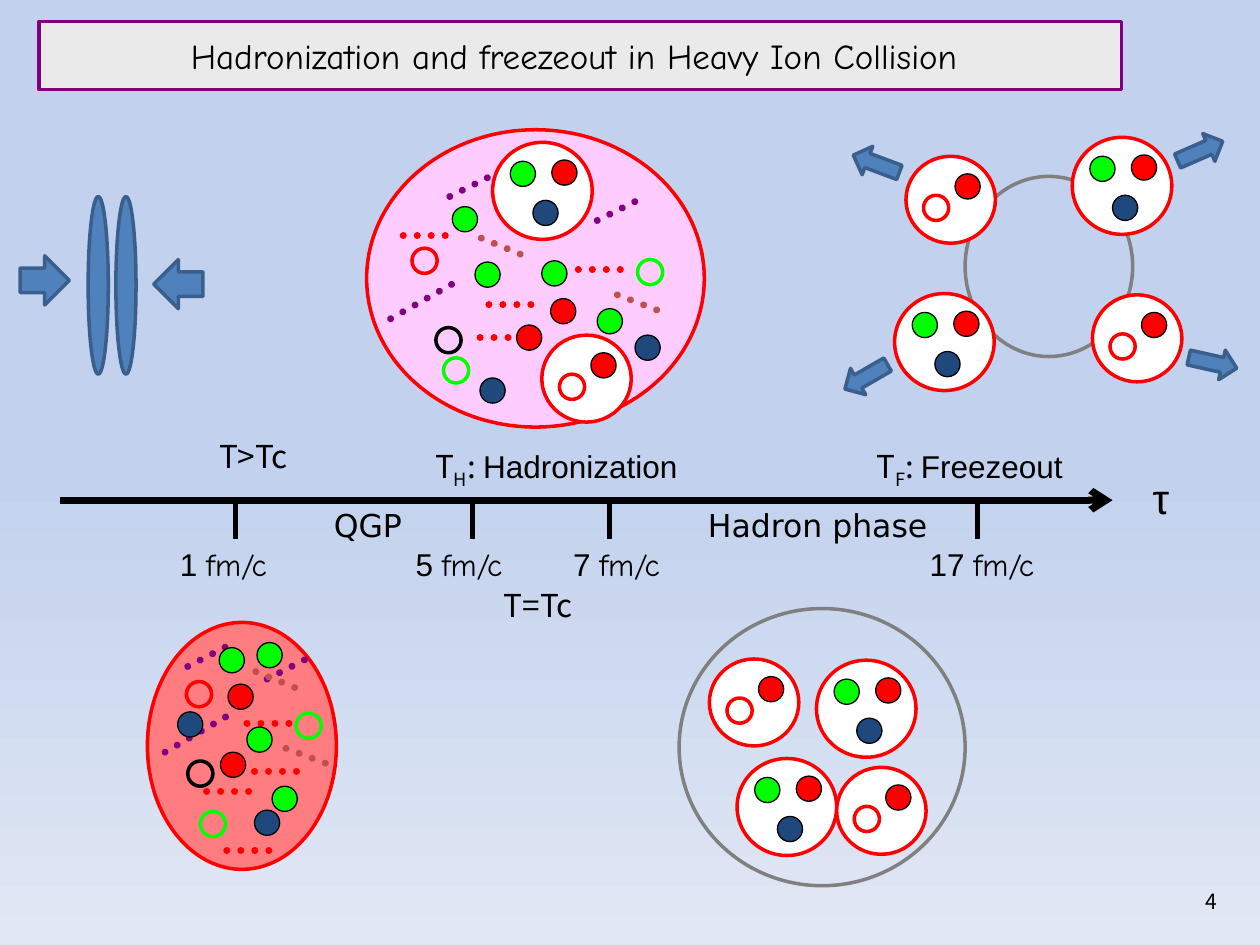
from lxml import etree
from pptx import Presentation
from pptx.dml.color import RGBColor
from pptx.enum.dml import MSO_LINE
from pptx.enum.shapes import MSO_CONNECTOR, MSO_SHAPE
from pptx.enum.text import MSO_ANCHOR, MSO_AUTO_SIZE, PP_ALIGN
from pptx.oxml.ns import qn
from pptx.util import Inches, Pt

COLORS = {
    "red": "FF0000", "green": "00FF00", "navy": "1F497D", "black": "000000",
    "white": "FFFFFF", "gray": "808080", "purple": "800080", "brown": "C0504D",
    "plasma": "FF7C80", "mixed": "FFCCFF", "blue": "4F81BD", "edge": "3A5F8C",
    "panel": "EAEAEA", "sky": "C2D1ED", "haze": "E1E8F5",
}
RGB = {name: RGBColor.from_string(value) for name, value in COLORS.items()}
SANS, ARIAL, COMIC, DEJAVU = "Noto Sans CJK KR", "Arial", "Comic Neue", "DejaVu Sans"

presentation = Presentation()
presentation.slide_width, presentation.slide_height = Inches(10), Inches(7.5)
slide = presentation.slides.add_slide(presentation.slide_layouts[6])


def add_shape(kind, left, top, width, height, fill=None, line="red", weight=2, rotation=0):
    shape = slide.shapes.add_shape(
        kind, Inches(left), Inches(top), Inches(width), Inches(height))
    shape.shadow.inherit = False
    shape.rotation = rotation
    if fill:
        shape.fill.solid()
        shape.fill.fore_color.rgb = RGB[fill]
    else:
        shape.fill.background()
    shape.line.color.rgb = RGB[line]
    shape.line.width = Pt(weight)
    return shape


def add_text(runs, left=0, top=0, width=1, height=0.4, size=18, align=PP_ALIGN.LEFT,
             anchor=MSO_ANCHOR.TOP, shape=None, wrap=True):
    """Write (text, font, baseline) runs in the given shape or in a new text box."""
    box = shape or slide.shapes.add_textbox(
        Inches(left), Inches(top), Inches(width), Inches(height))
    frame = box.text_frame
    frame.word_wrap = wrap
    frame.vertical_anchor = anchor
    if anchor == MSO_ANCHOR.TOP:
        frame.auto_size = MSO_AUTO_SIZE.SHAPE_TO_FIT_TEXT
    paragraph = frame.paragraphs[0]
    paragraph.alignment = align
    for text, font, baseline in runs:
        run = paragraph.add_run()
        run.text = text
        run.font.name = font
        run.font.size = Pt(size)
        run.font.color.rgb = RGB["black"]
        if baseline:
            run._r.get_or_add_rPr().set("baseline", str(baseline * 1000))


# Background
background = slide.background.fill
background.gradient()
background.gradient_angle = 270
for stop, position, color in zip(background.gradient_stops, (0.5, 1), ("sky", "haze")):
    stop.position = position
    stop.color.rgb = RGB[color]

# Fireballs and the rings around the hadrons
OVAL = MSO_SHAPE.OVAL
add_shape(OVAL, 5.39, 4.83, 2.27, 2.2, line="gray")
add_shape(OVAL, 7.66, 1.4, 1.33, 1.43, line="gray")
add_shape(OVAL, 1.17, 4.94, 1.5, 1.96, fill="plasma")
add_shape(OVAL, 2.91, 1.03, 2.68, 2.36, fill="mixed")

# Gluons (dotted), time axis and its ticks
AXIS_Y = 3.97
gluons = {
    "purple": [(1.31, 5.97, 1.86, 5.65), (2.12, 5.39, 2.43, 5.23), (1.49, 5.29, 1.8, 5.13),
               (3.1, 2.53, 3.65, 2.22), (4.74, 1.75, 5.06, 1.59), (3.57, 1.56, 3.89, 1.4)],
    "brown": [(2.03, 5.33, 2.42, 5.49), (2.27, 5.94, 2.67, 6.09),
              (3.82, 1.89, 4.21, 2.05), (4.9, 2.34, 5.29, 2.49)],
    "red": [(x, y, x + 0.39, y) for x, y in (
        (2.02, 6.12), (1.8, 6.75), (1.96, 5.74), (1.64, 6.28),
        (3.81, 2.68), (3.2, 1.87), (4.59, 2.14), (3.88, 2.42))],
}
lines = [(ends, color, 4, "dots") for color, group in gluons.items() for ends in group]
lines.append(((0.48, AXIS_Y, 8.83, AXIS_Y), "black", 4, "arrow"))
lines += [((x, AXIS_Y, x, 4.28), "black", 3, "plain") for x in (1.87, 3.75, 4.84, 7.76)]
for ends, color, weight, style in lines:
    connector = slide.shapes.add_connector(
        MSO_CONNECTOR.STRAIGHT, *[Inches(value) for value in ends])
    connector.line.color.rgb = RGB[color]
    connector.line.width = Pt(weight)
    outline = connector.line._get_or_add_ln()
    if style == "dots":
        connector.line.dash_style = MSO_LINE.ROUND_DOT
        outline.set("cap", "rnd")
    elif style == "arrow":
        etree.SubElement(outline, qn("a:tailEnd"), type="arrow")
    etree.SubElement(connector._element.spPr, qn("a:effectLst"))

# Free quarks (filled) and antiquarks (open)
quarks = {
    "green": [(1.96, 5.77), (2.04, 5.1), (1.74, 5.14), (2.16, 6.24),
              (3.77, 2.08), (3.59, 1.64), (4.3, 2.07), (4.74, 2.45)],
    "red": [(1.81, 5.43), (1.75, 5.97), (4.1, 2.58), (4.37, 2.37)],
    "navy": [(2.02, 6.43), (1.41, 5.65), (3.81, 3), (5.04, 2.66)],
}
antiquarks = {
    "green": [(2.35, 5.66), (1.59, 6.44), (5.06, 2.06), (3.52, 2.84)],
    "black": [(1.49, 6.04), (3.46, 2.6)],
    "red": [(1.48, 5.41), (3.27, 1.97)],
}

# Hadrons: a bag of quarks placed relative to its corner
BAG = {"baryon": (0.79, 0.77), "meson": (0.71, 0.69)}
hadrons = {
    "baryon": [(3.91, 1.13), (6.48, 5.24), (5.85, 6.02), (8.51, 1.09), (7.1, 2.33)],
    "meson": [(4.3, 2.66), (6.64, 6.09), (5.63, 5.23), (8.67, 2.34), (7.19, 1.24)],
}
for kind, corners in hadrons.items():
    for x, y in corners:
        add_shape(OVAL, x, y, *BAG[kind], fill="white")
        if kind == "baryon":
            quarks["green"].append((x + 0.14, y + 0.15))
            quarks["red"].append((x + 0.47, y + 0.14))
            quarks["navy"].append((x + 0.32, y + 0.46))
        else:
            quarks["red"].append((x + 0.39, y + 0.14))
            antiquarks["red"].append((x + 0.14, y + 0.31))

for color, corners in quarks.items():
    for x, y in corners:
        add_shape(OVAL, x, y, 0.2, 0.2, fill=color, line="black", weight=0.75)
for color, corners in antiquarks.items():
    for x, y in corners:
        add_shape(OVAL, x, y, 0.2, 0.2, line=color)

# Colliding nuclei and motion arrows
for x in (0.7, 0.92):
    add_shape(OVAL, x, 1.56, 0.16, 1.41, fill="blue", line="edge")
for x, y, height, rotation in (
        (0.16, 2.03, 0.39, 0), (1.22, 2.06, 0.39, 180), (9.33, 1.08, 0.24, 336.4),
        (9.43, 2.76, 0.24, 12.6), (6.68, 2.87, 0.24, 150), (6.76, 1.18, 0.24, 200.5)):
    add_shape(MSO_SHAPE.RIGHT_ARROW, x, y, 0.39, height,
              fill="blue", line="edge", rotation=rotation)

# Axis labels
for text, x, width in (("1 ", 1.33, 1.1), ("5 ", 3.2, 1.1), ("7 ", 4.45, 1.1), ("17 ", 7.28, 1.49)):
    add_text([(text, ARIAL, 0), ("fm/c", COMIC, 0)], left=x, top=4.28, width=width)
for text, x, width in (("QGP", 2.25, 1.34), ("Hadron phase", 5.47, 2.04)):
    add_text([(text, DEJAVU, 0)], left=x, top=AXIS_Y, width=width, align=PP_ALIGN.CENTER)
for index, text, x in (("H", "Hadronization", 3.28), ("F", "Freezeout", 6.56)):
    add_text([("T", SANS, 0), (index, SANS, -25), (": ", SANS, 0), (text, ARIAL, 0)],
             left=x, top=3.5, width=2.27, align=PP_ALIGN.CENTER)
for text, x, y in (("T>Tc", 1.64, 3.42), ("T=Tc", 3.9, 4.6)):
    add_text([(text, SANS, 0)], left=x, top=y, width=0.79)
add_text([("τ", ARIAL, 0)], left=9.05, top=3.7, width=0.63, height=0.5, size=24)

# Title and slide number
title = add_shape(MSO_SHAPE.RECTANGLE, 0.31, 0.17, 8.59, 0.54, fill="panel", line="purple")
add_text([("Hadronization and freezeout in Heavy Ion Collision ", COMIC, 0)], shape=title,
         size=20, align=PP_ALIGN.CENTER, anchor=MSO_ANCHOR.MIDDLE, wrap=False)
add_text([("4", SANS, 0)], left=7.43, top=6.95, width=2.33, size=12,
         align=PP_ALIGN.RIGHT, anchor=MSO_ANCHOR.MIDDLE)

presentation.save("out.pptx")
